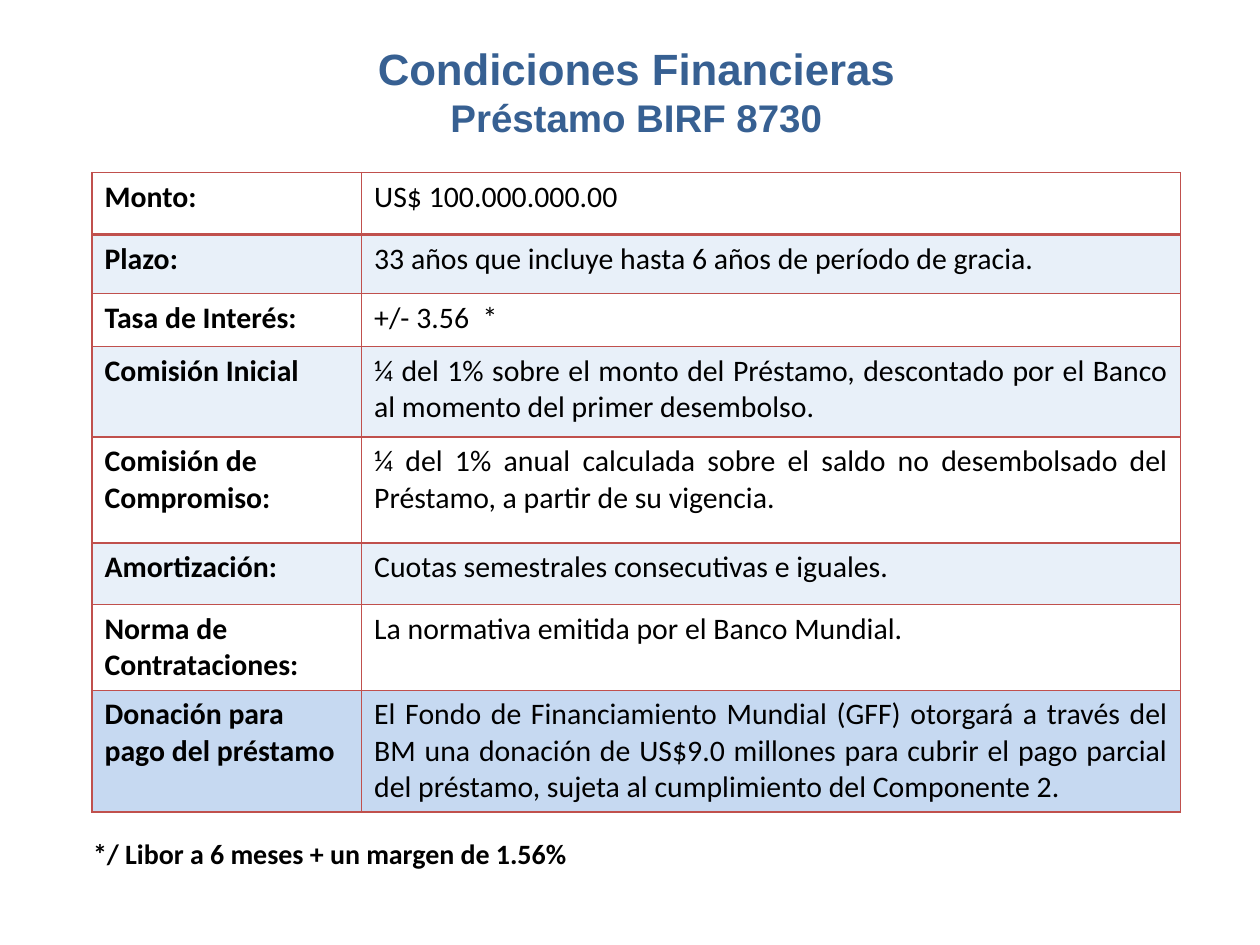
from dataclasses import dataclass

from lxml.etree import SubElement
from pptx import Presentation
from pptx.dml.color import RGBColor
from pptx.enum.text import MSO_ANCHOR, PP_ALIGN
from pptx.oxml import parse_xml
from pptx.oxml.ns import nsdecls, qn
from pptx.util import Inches, Pt


@dataclass(frozen=True)
class Theme:
    ink: str = "000000"
    title: str = "376092"
    border: str = "C0504D"
    white: str = "FFFFFF"
    band: str = "8EB4E3"
    accent: str = "C6D9F1"
    head: str = "Arial"
    body: str = "Calibri"
    head_size: int = 25
    sub_size: int = 22
    cell_size: int = 17
    note_size: int = 16


@dataclass(frozen=True)
class Term:
    label: str
    text: str
    height: float
    fill: str
    alpha: int = 100
    justify: bool = False


THEME = Theme()
LEFT, WIDTH = 0.73, 8.64
COLS = (2.14, 6.5)
BAND = (THEME.band, 20)
TERMS = (
    Term("Monto:", "US$ 100.000.000.00", 0.49, THEME.white),
    Term("Plazo:", "33 años que incluye hasta 6 años de período de gracia.",
         0.47, *BAND, justify=True),
    Term("Tasa de Interés:", "+/- 3.56  *", 0.42, THEME.white),
    Term("Comisión Inicial",
         "¼ del 1% sobre el monto del Préstamo, descontado por el Banco "
         "al momento del primer desembolso.", 0.72, *BAND, justify=True),
    Term("Comisión de Compromiso:",
         "¼ del 1% anual calculada sobre el saldo no desembolsado del "
         "Préstamo, a partir de su vigencia.", 0.84, THEME.white, justify=True),
    Term("Amortización:", "Cuotas semestrales consecutivas e iguales.",
         0.49, *BAND),
    Term("Norma de Contrataciones:",
         "La normativa emitida por el Banco Mundial.",
         0.68, THEME.white, justify=True),
    Term("Donación para pago del préstamo",
         "El Fondo de Financiamiento Mundial (GFF) otorgará a través del BM "
         "una donación de US$9.0 millones para cubrir el pago parcial del "
         "préstamo, sujeta al cumplimiento del Componente 2.",
         0.96, THEME.accent, justify=True),
)


def write(para, text: str, *, size: int, font: str = THEME.body,
          color: str = THEME.ink, bold: bool = True,
          align: PP_ALIGN = PP_ALIGN.LEFT) -> None:
    para.alignment = align
    run = para.add_run()
    run.text = text
    run.font.name = font
    run.font.size = Pt(size)
    run.font.bold = bold
    run.font.color.rgb = RGBColor.from_string(color)


def paint(cell, term: Term) -> None:
    cell.fill.solid()
    cell.fill.fore_color.rgb = RGBColor.from_string(term.fill)
    if term.alpha < 100:
        color = cell.fill._xPr.find(".//" + qn("a:srgbClr"))
        SubElement(color, qn("a:alpha")).set("val", str(term.alpha * 1000))


def frame(cell, top: int, bottom: int) -> None:
    """Draw the four cell borders, with top and bottom widths in points."""
    props = cell._tc.get_or_add_tcPr()
    sides = {"lnL": 1, "lnR": 1, "lnT": top, "lnB": bottom}
    for spot, (side, width) in enumerate(sides.items()):
        props.insert(spot, parse_xml(
            f'<a:{side} {nsdecls("a")} w="{Pt(width)}"><a:solidFill>'
            f'<a:srgbClr val="{THEME.border}"/></a:solidFill></a:{side}>'))


def add_title(slide) -> None:
    title = slide.shapes.title
    title.left, title.top = Inches(LEFT), Inches(0.29)
    title.width, title.height = Inches(WIDTH), Inches(0.86)
    box = title.text_frame
    box.vertical_anchor = MSO_ANCHOR.MIDDLE
    look = dict(font=THEME.head, color=THEME.title, align=PP_ALIGN.CENTER)
    write(box.paragraphs[0], "Condiciones Financieras",
          size=THEME.head_size, **look)
    write(box.add_paragraph(), "Préstamo BIRF 8730",
          size=THEME.sub_size, **look)


def add_terms(slide) -> None:
    height = sum(term.height for term in TERMS)
    table = slide.shapes.add_table(
        len(TERMS), len(COLS), Inches(LEFT), Inches(1.37),
        Inches(WIDTH), Inches(height)).table
    for column, width in zip(table.columns, COLS):
        column.width = Inches(width)
    for index, term in enumerate(TERMS):
        table.rows[index].height = Inches(term.height)
        label, value = table.rows[index].cells
        for cell in (label, value):
            paint(cell, term)
            frame(cell, top=2 if index == 1 else 1,
                  bottom=2 if index == 0 else 1)
        write(label.text_frame.paragraphs[0], term.label, size=THEME.cell_size)
        write(value.text_frame.paragraphs[0], term.text, size=THEME.cell_size,
              bold=False,
              align=PP_ALIGN.JUSTIFY if term.justify else PP_ALIGN.LEFT)


def add_note(slide) -> None:
    box = slide.shapes.add_textbox(
        Inches(0.64), Inches(6.59), Inches(4.06), Inches(0.37)).text_frame
    box.word_wrap = False
    write(box.paragraphs[0], "*/ Libor a 6 meses + un margen de 1.56%",
          size=THEME.note_size)


def main() -> None:
    deck = Presentation()
    deck.slide_width, deck.slide_height = Inches(10), Inches(7.5)
    slide = deck.slides.add_slide(deck.slide_layouts[5])
    add_title(slide)
    add_terms(slide)
    add_note(slide)
    deck.save("out.pptx")


if __name__ == "__main__":
    main()
